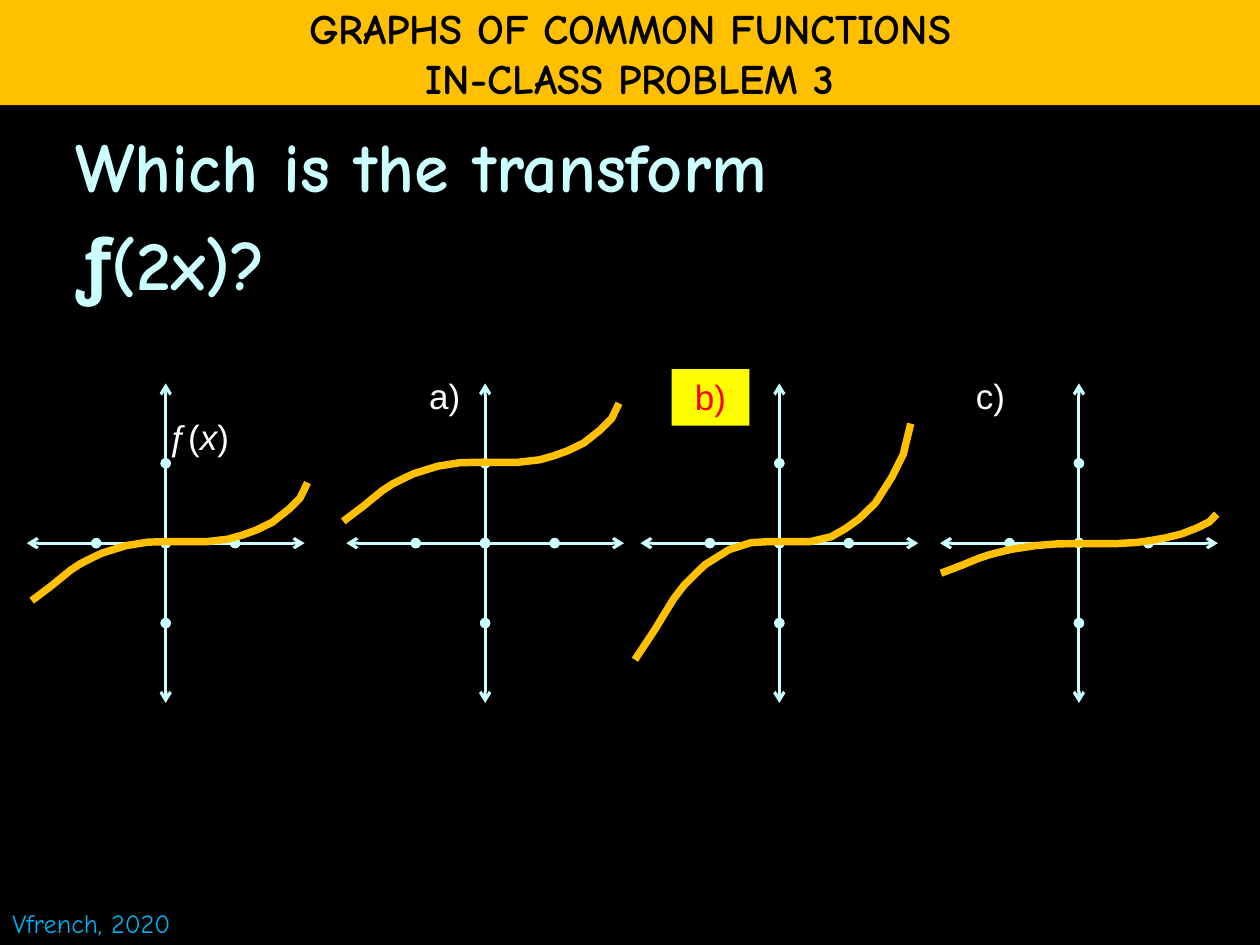
import pptx
import pptx.dml.color
import pptx.enum.shapes
import pptx.enum.text
import pptx.oxml.ns
import pptx.util
from lxml import etree
from pptx.util import Cm, Pt

RGBColor = pptx.dml.color.RGBColor
BLACK = RGBColor(0x00, 0x00, 0x00)
WHITE = RGBColor(0xFF, 0xFF, 0xFF)
PALE_CYAN = RGBColor(0xCC, 0xFF, 0xFF)
AMBER = RGBColor(0xFF, 0xC0, 0x00)
YELLOW = RGBColor(0xFF, 0xFF, 0x00)
RED = RGBColor(0xFF, 0x00, 0x00)
BLUE = RGBColor(0x00, 0xB0, 0xF0)

HEADING_FONT = "Comic Neue"
LABEL_FONT = "Arial"
CENTER = pptx.enum.text.PP_ALIGN.CENTER
MIDDLE = pptx.enum.text.MSO_ANCHOR.MIDDLE
TOP = pptx.enum.text.MSO_ANCHOR.TOP

AXIS_Y = 10.95
STEP_X = 1.4
STEP_Y = 1.61

# Distance from the left end of the curve and height above its flat part, in cm
CURVE = [
    (0, -1.19), (0.41, -0.88), (0.58, -0.74), (0.79, -0.57), (0.99, -0.44),
    (1.27, -0.3), (1.42, -0.23), (1.9, -0.08), (2.34, -0.01), (2.69, 0),
    (3.07, 0), (3.53, 0), (3.96, 0.05), (4.24, 0.13), (4.52, 0.23),
    (4.85, 0.39), (5.18, 0.65), (5.41, 0.88), (5.56, 1.19),
]

# Axis centre, left end of the curve, height of its flat part, vertical stretch
GRAPHS = [
    (3.34, 0.64, 10.92, 1),
    (9.78, 6.92, 9.32, 1),
    (15.71, 12.8, 10.92, 2),
    (21.75, 18.97, 10.96, 0.5),
]


def write_text(shape, lines, size, color, font=LABEL_FONT, bold=False,
               align=None, anchor=TOP, wrap=True, space_before=0):
    """Fill a shape with paragraphs, each a list of (text, italic) spans."""
    frame = shape.text_frame
    frame.word_wrap = wrap
    frame.auto_size = pptx.enum.text.MSO_AUTO_SIZE.NONE
    frame.vertical_anchor = anchor
    for index, spans in enumerate(lines):
        para = frame.add_paragraph() if index else frame.paragraphs[0]
        para.alignment = align
        para.space_before = Pt(space_before)
        for text, italic in spans:
            span = para.add_run()
            span.text = text
            span.font.name = font
            span.font.size = Pt(size)
            span.font.bold = bold
            span.font.italic = italic
            span.font.color.rgb = color


def plain(*texts):
    """Turn each text into a paragraph of one upright span."""
    return [[(text, False)] for text in texts]


def add_text(page, left, top, width, height, lines, **style):
    box = page.shapes.add_textbox(Cm(left), Cm(top), Cm(width), Cm(height))
    write_text(box, lines, **style)


def add_title(page):
    title = page.shapes.title
    title.left, title.top = Cm(0), Cm(0)
    title.width, title.height = Cm(25.4), Cm(2.12)
    title.fill.solid()
    title.fill.fore_color.rgb = AMBER
    write_text(title, plain("GRAPHS OF COMMON FUNCTIONS", "IN-CLASS PROBLEM 3"),
               size=24, color=BLACK, font=HEADING_FONT, bold=True,
               align=CENTER, anchor=MIDDLE)


def add_answer(page):
    box = page.shapes.add_shape(pptx.enum.shapes.MSO_SHAPE.RECTANGLE,
                                Cm(13.54), Cm(7.44), Cm(1.57), Cm(1.14))
    box.shadow.inherit = False
    box.fill.solid()
    box.fill.fore_color.rgb = YELLOW
    box.line.fill.background()
    write_text(box, plain("b)"), size=20, color=RED, align=CENTER)


def add_axis_segment(group, start, end, head, tail):
    line = group.shapes.add_connector(
        pptx.enum.shapes.MSO_CONNECTOR.STRAIGHT,
        Cm(start[0]), Cm(start[1]), Cm(end[0]), Cm(end[1]))
    line.line.color.rgb = PALE_CYAN
    line.line.width = Pt(1.75)
    properties = line.element.spPr
    outline = properties.find(pptx.oxml.ns.qn("a:ln"))
    for tag, kind in (("a:headEnd", head), ("a:tailEnd", tail)):
        etree.SubElement(outline, pptx.oxml.ns.qn(tag), type=kind)
    etree.SubElement(properties, pptx.oxml.ns.qn("a:effectLst"))


def add_axes(page, center):
    """Draw both axes as unit segments: dots at the ticks, arrows at the ends."""
    group = page.shapes.add_group_shape()
    for dx, dy in ((STEP_X, 0), (0, STEP_Y)):
        for unit in range(-2, 2):
            start, end = [(center + n * dx, AXIS_Y + n * dy)
                          for n in (unit, unit + 1)]
            add_axis_segment(group, start, end,
                             head="arrow" if unit == -2 else "oval",
                             tail="arrow" if unit == 1 else "oval")


def add_curve(page, left, flat_y, stretch):
    points = [(Cm(left + x), Cm(flat_y - stretch * rise)) for x, rise in CURVE]
    builder = page.shapes.build_freeform(*points[0])
    builder.add_line_segments(points[1:], close=False)
    curve = builder.convert_to_shape()
    curve.shadow.inherit = False
    curve.fill.background()
    curve.line.color.rgb = AMBER
    curve.line.width = Pt(4.25)


def main():
    deck = pptx.Presentation()
    deck.slide_width, deck.slide_height = Cm(25.4), Cm(19.05)
    page = deck.slides.add_slide(deck.slide_layouts[5])
    page.background.fill.solid()
    page.background.fill.fore_color.rgb = BLACK

    add_title(page)
    for center, *_ in GRAPHS:
        add_axes(page, center)
    add_text(page, 1.27, 2.34, 22.86, 4.2,
             plain("Which is the transform", "ƒ(2x)?"),
             size=40, color=PALE_CYAN, font=HEADING_FONT, bold=True,
             space_before=8)
    add_text(page, 0, 18.16, 4.17, 0.89, plain("Vfrench, 2020"),
             size=15, color=BLUE, font=HEADING_FONT, wrap=False)
    for label, left in (("a)", 8.18), ("c)", 19.18)):
        add_text(page, left, 7.42, 1.57, 0.84, plain(label),
                 size=20, color=WHITE, align=CENTER)
    add_answer(page)
    add_text(page, 3.15, 8.26, 2.62, 1.14,
             [[("ƒ(", False), ("x", True), (")", False)]],
             size=20, color=WHITE)
    for _, left, flat_y, stretch in GRAPHS:
        add_curve(page, left, flat_y, stretch)
    deck.save("out.pptx")


if __name__ == "__main__":
    main()
